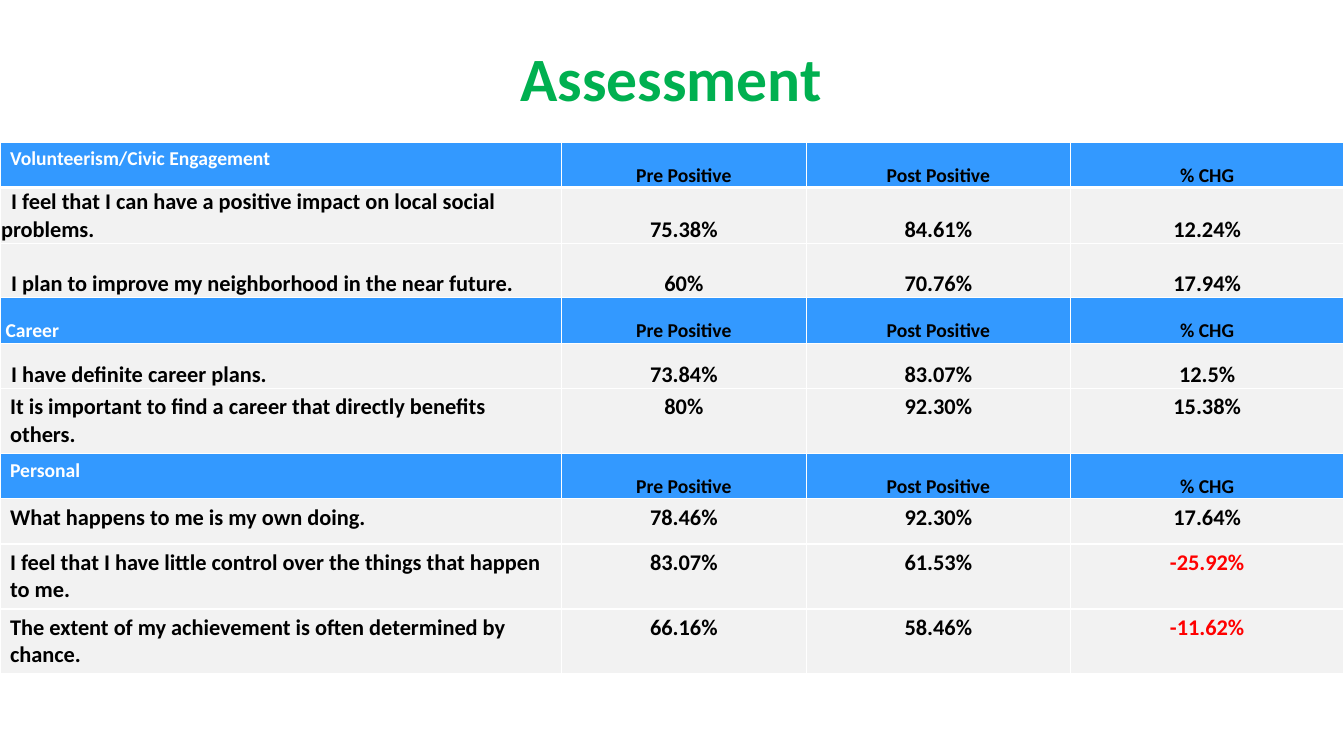
from lxml import etree
from pptx import Presentation
from pptx.dml.color import RGBColor
from pptx.enum.text import MSO_ANCHOR, PP_ALIGN
from pptx.oxml.ns import qn
from pptx.util import Pt

TOP, MIDDLE, BOTTOM = MSO_ANCHOR.TOP, MSO_ANCHOR.MIDDLE, MSO_ANCHOR.BOTTOM
LEFT, CENTER = PP_ALIGN.LEFT, PP_ALIGN.CENTER

WHITE = RGBColor(0xFF, 0xFF, 0xFF)
BLACK = RGBColor(0, 0, 0)
RED = RGBColor(0xFF, 0, 0)
GREEN = RGBColor(0, 0xB0, 0x50)
BLUE = RGBColor(0x33, 0x99, 0xFF)
GRAY = RGBColor(0xF2, 0xF2, 0xF2)
FONT = "Calibri"

# Content: each row has its texts, height, anchors of label and values,
# and first-line indent of the label
TITLE = "Assessment"
MEASURES = ("Pre Positive", "Post Positive", "% CHG")
SHORT, TALL = 32.4, 46.1
ROWS = [
    (("Volunteerism/Civic Engagement", *MEASURES), SHORT, TOP, BOTTOM, 0),
    (("I feel that I can have a positive impact on local social problems.",
      "75.38%", "84.61%", "12.24%"), 39.6, MIDDLE, BOTTOM, 7.2),
    (("I plan to improve my neighborhood in the near future.",
      "60%", "70.76%", "17.94%"), 38.9, BOTTOM, BOTTOM, 7.2),
    (("Career", *MEASURES), SHORT, BOTTOM, BOTTOM, 3.2),
    (("I have definite career plans.",
      "73.84%", "83.07%", "12.5%"), SHORT, BOTTOM, BOTTOM, 7.2),
    (("It is important to find a career that directly benefits others.",
      "80%", "92.30%", "15.38%"), TALL, TOP, TOP, 0),
    (("Personal", *MEASURES), SHORT, TOP, BOTTOM, 0),
    (("What happens to me is my own doing.",
      "78.46%", "92.30%", "17.64%"), SHORT, TOP, TOP, 0),
    (("I feel that I have little control over the things that happen to me.",
      "83.07%", "61.53%", "-25.92%"), TALL, TOP, TOP, 0),
    (("The extent of my achievement is often determined by chance.",
      "66.16%", "58.46%", "-11.62%"), TALL, TOP, TOP, 0),
]
COLUMN_WIDTHS = (401, 175, 188.6, 195.4)
TABLE_TOP = 101.5


def set_format(target, values):
    for name, value in values.items():
        setattr(target, name, value)


def set_borders(cell, widths):
    properties = cell._tc.get_or_add_tcPr()
    for side, width in widths.items():
        line = etree.SubElement(properties, qn(f"a:ln{side}"), w=str(Pt(width)))
        fill = etree.SubElement(line, qn("a:solidFill"))
        etree.SubElement(fill, qn("a:srgbClr"), val=str(WHITE))


def fill_cell(cell, text, anchor, align, is_header, indent, color):
    cell.fill.solid()
    cell.fill.fore_color.rgb = BLUE if is_header else GRAY
    cell.vertical_anchor = anchor
    if anchor != TOP:
        set_format(cell, {"margin_left": Pt(0.75), "margin_right": Pt(0.75),
                          "margin_top": Pt(0.75), "margin_bottom": Pt(0)})
    paragraph = cell.text_frame.paragraphs[0]
    paragraph.alignment = align
    if indent:
        paragraph._p.get_or_add_pPr().set("indent", str(Pt(indent)))
    run = paragraph.add_run()
    run.text = text
    set_format(run.font, {"name": FONT, "bold": True,
                          "size": Pt(14 if is_header else 16)})
    run.font.color.rgb = color


presentation = Presentation()
set_format(presentation, {"slide_width": Pt(960), "slide_height": Pt(540)})
slide = presentation.slides.add_slide(presentation.slide_layouts[5])

# Title
title = slide.shapes.title
set_format(title, {"left": Pt(103.7), "top": Pt(10.1),
                   "width": Pt(751.7), "height": Pt(90)})
title.text_frame.text = TITLE
title.text_frame.vertical_anchor = MIDDLE
heading = title.text_frame.paragraphs[0]
heading.alignment = CENTER
set_format(heading.font, {"name": FONT, "size": Pt(44), "bold": True})
heading.font.color.rgb = GREEN

# Table frame
table = slide.shapes.add_table(
    len(ROWS), len(COLUMN_WIDTHS), Pt(0), Pt(TABLE_TOP),
    Pt(sum(COLUMN_WIDTHS)), Pt(sum(row[1] for row in ROWS))).table
table.horz_banding = False
for column, width in zip(table.columns, COLUMN_WIDTHS):
    column.width = Pt(width)

# Table cells
for row_index, (texts, height, label_anchor, value_anchor, indent) in enumerate(ROWS):
    table.rows[row_index].height = Pt(height)
    is_header = texts[1:] == MEASURES
    borders = {"L": 1, "R": 1, "T": 3 if row_index == 1 else 1,
               "B": 3 if row_index == 0 else 1}
    for column_index, text in enumerate(texts):
        cell = table.cell(row_index, column_index)
        set_borders(cell, borders)
        if column_index == 0:
            color = WHITE if is_header else BLACK
            fill_cell(cell, text, label_anchor, LEFT, is_header, indent, color)
        else:
            color = RED if text.startswith("-") else BLACK
            fill_cell(cell, text, value_anchor, CENTER, is_header, 0, color)

presentation.save("out.pptx")
